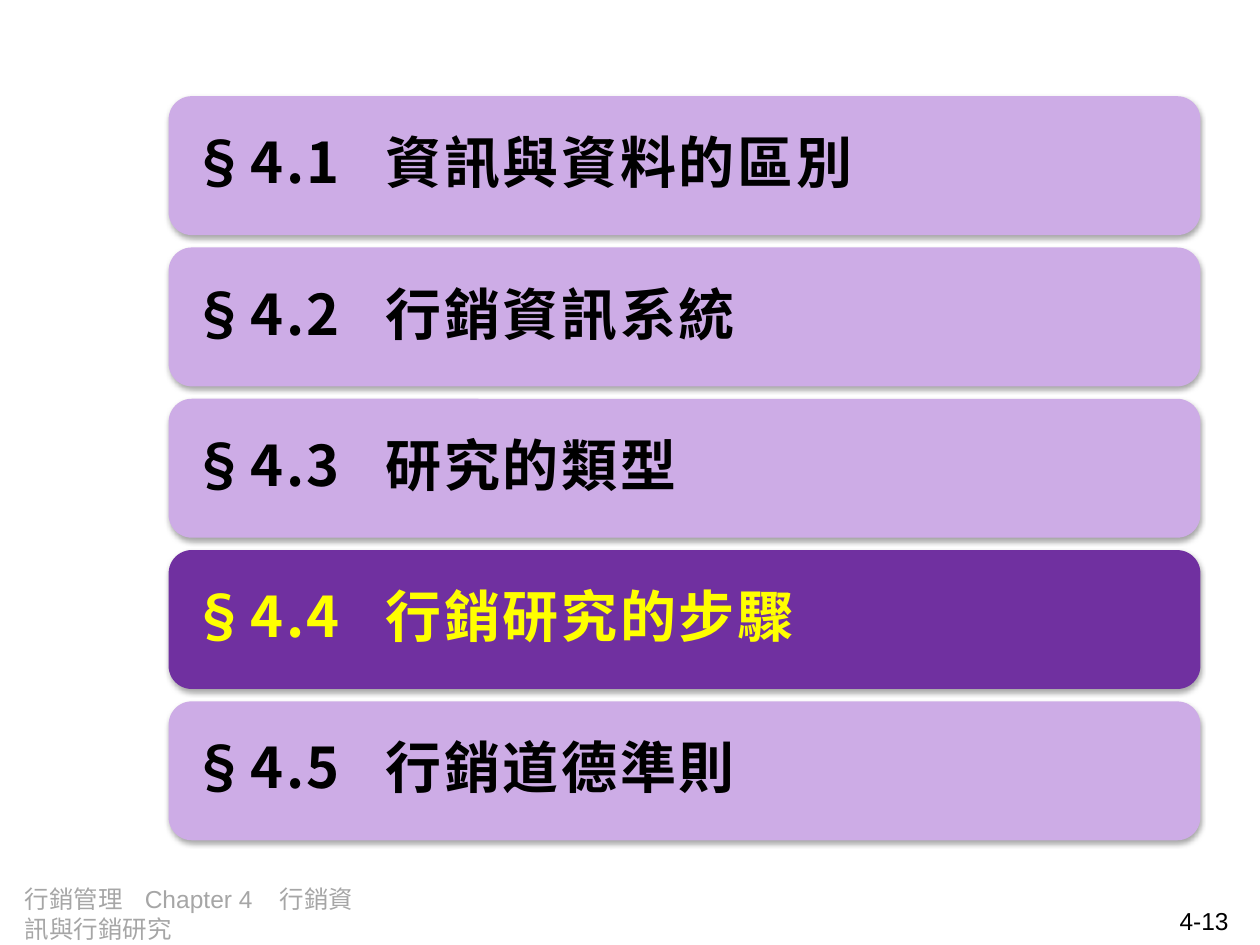
from lxml import etree
from pptx import Presentation
from pptx.dml.color import RGBColor
from pptx.enum import shapes, text
from pptx.oxml import ns
from pptx.util import Cm, Pt

TOPICS = [
    ("§4.1", "資訊與資料的區別"),
    ("§4.2", "行銷資訊系統"),
    ("§4.3", "研究的類型"),
    ("§4.4", "行銷研究的步驟"),
    ("§4.5", "行銷道德準則"),
]
ACTIVE = 3
FOOTER = ["行銷管理", "Chapter 4", "行銷資訊與行銷研究"]
NUMBER = "4-13"

THEME = {
    "card": "CDACE6", "active": "7030A0",
    "ink": "000000", "bright": "FFFF00", "muted": "A6A6A6",
    "head": "Noto Sans CJK SC", "body": "Arial",
    "big": 32, "small": 14,
}
LEFT, TOP, WIDTH, HEIGHT, PITCH = 3.4, 1.94, 20.8, 2.8, 3.05
INSET = 0.33
TOPIC_TABS = [3.91]
FOOTER_TABS = [2.42, 5.14]


def color(name):
    return RGBColor.from_string(THEME[name])


def child(parent, tag, **attrs):
    node = etree.SubElement(parent, ns.qn(tag))
    for key, value in attrs.items():
        node.set(key, str(value))
    return node


def add_tabs(para, stops):
    tabs = child(para._p.get_or_add_pPr(), "a:tabLst")
    for stop in stops:
        child(tabs, "a:tab", pos=int(Cm(stop)), algn="l")


def add_run(para, words, face, size, ink):
    run = para.add_run()
    run.text = words
    run.font.name = THEME[face]
    run.font.size = Pt(THEME[size])
    run.font.color.rgb = color(ink)
    child(run._r.get_or_add_rPr(), "a:ea", typeface=THEME["head"])
    return run


def add_parts(para, parts, face, size, ink):
    return [add_run(para, ("\t" if i else "") + part, face, size, ink)
            for i, part in enumerate(parts)]


def add_shadow(shape):
    shape.shadow.inherit = False
    effects = shape._element.spPr.find(ns.qn("a:effectLst"))
    outer = child(effects, "a:outerShdw", blurRad=int(Pt(3.1)),
                  dist=int(Pt(1.8)), dir=90 * 60000, rotWithShape=0)
    child(child(outer, "a:srgbClr", val=THEME["ink"]), "a:alpha", val=35000)


def add_card(slide, index, topic):
    active = index == ACTIVE
    card = slide.shapes.add_shape(
        shapes.MSO_SHAPE.ROUNDED_RECTANGLE,
        Cm(LEFT), Cm(TOP + index * PITCH), Cm(WIDTH), Cm(HEIGHT))
    card.fill.solid()
    card.fill.fore_color.rgb = color("active" if active else "card")
    card.line.fill.background()
    add_shadow(card)
    frame = card.text_frame
    frame.word_wrap = True
    frame.vertical_anchor = text.MSO_ANCHOR.MIDDLE
    frame.margin_left = frame.margin_right = Cm(INSET)
    frame.margin_top = frame.margin_bottom = Cm(INSET)
    para = frame.paragraphs[0]
    para.alignment = text.PP_ALIGN.LEFT
    para.line_spacing = 0.9
    after = child(para._p.get_or_add_pPr(), "a:spcAft")
    child(after, "a:spcPct", val=35000)
    add_tabs(para, TOPIC_TABS)
    ink = "bright" if active else "ink"
    for run in add_parts(para, topic, "head", "big", ink):
        run.font.bold = True
        run._r.get_or_add_rPr().set("spc", "150")


def add_note(slide, left, top, width, parts, ink, align, stops=()):
    box = slide.shapes.add_textbox(Cm(left), Cm(top), Cm(width), Cm(0.74))
    box.text_frame.word_wrap = True
    para = box.text_frame.paragraphs[0]
    para.alignment = align
    if stops:
        add_tabs(para, stops)
    add_parts(para, parts, "body", "small", ink)


def main():
    deck = Presentation()
    deck.slide_width, deck.slide_height = Cm(25.4), Cm(19.05)
    slide = deck.slides.add_slide(deck.slide_layouts[6])
    add_note(slide, 0.25, 17.7, 7.24, FOOTER, "muted",
             text.PP_ALIGN.LEFT, FOOTER_TABS)
    add_note(slide, 19.1, 18.14, 5.92, [NUMBER], "ink", text.PP_ALIGN.RIGHT)
    for index, topic in enumerate(TOPICS):
        add_card(slide, index, topic)
    deck.save("out.pptx")


if __name__ == "__main__":
    main()
